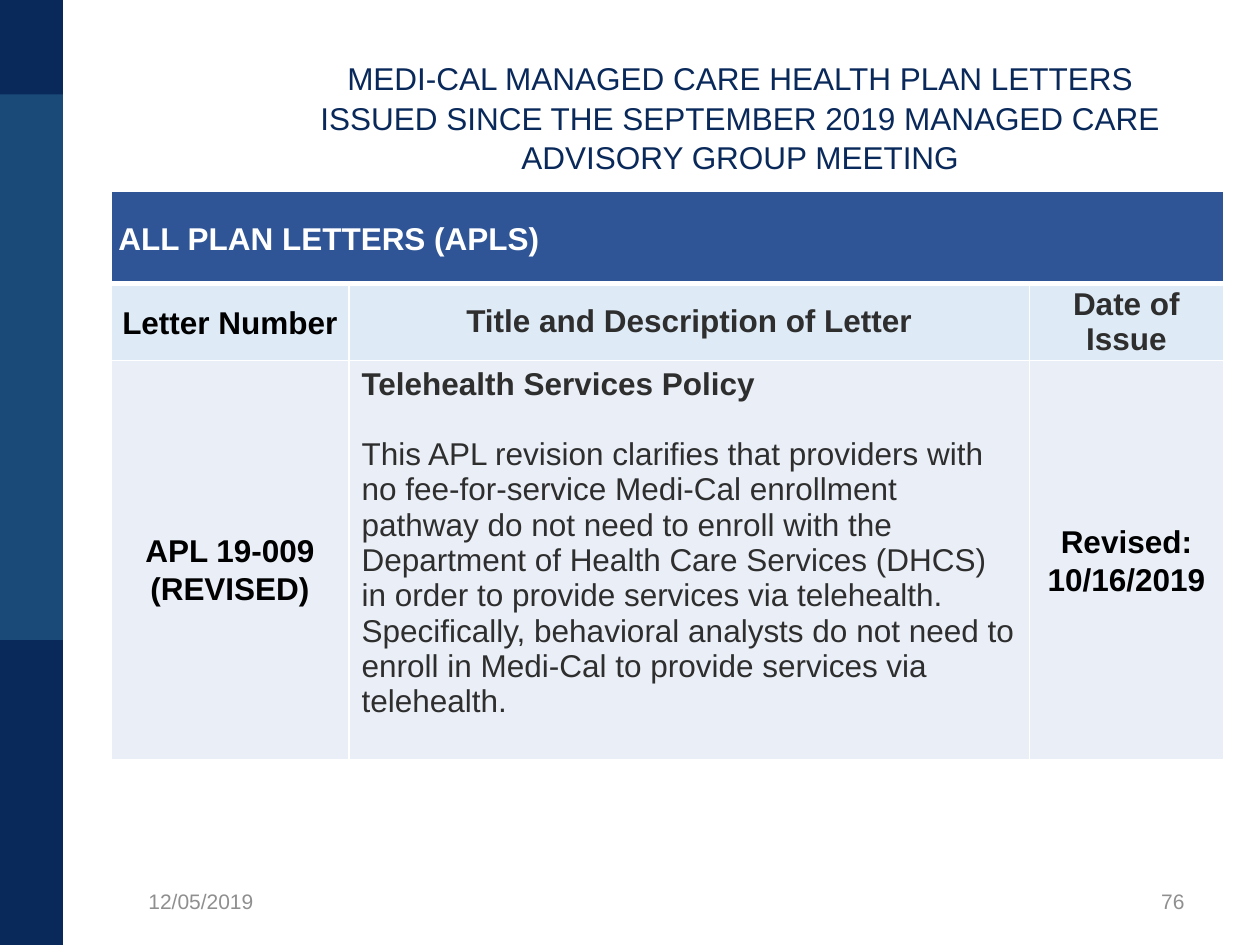
from lxml import etree
from pptx import Presentation
from pptx.util import Inches, Pt
from pptx.dml.color import RGBColor as RGB
from pptx.enum.shapes import MSO_SHAPE as SHAPE
from pptx.enum.text import MSO_ANCHOR as ANCHOR, PP_ALIGN as ALIGN
from pptx.oxml import parse_xml
from pptx.oxml.ns import nsdecls

COLORS = {
    "white": "FFFFFF", "navy": "0A295B", "blue": "1A4A78", "head": "2F5597",
    "pale": "DEEBF7", "body": "EAEFF7", "dark": "2E2E2E", "black": "000000",
    "gray": "8F8F8F",
}


def color(name):
    return RGB.from_string(COLORS[name])


def write(frame, text, size=18, ink="dark", bold=False, align=ALIGN.LEFT,
          lead=1, gap=0, fresh=True):
    para = frame.paragraphs[0] if fresh else frame.add_paragraph()
    para.text = text
    para.alignment = align
    para.line_spacing = lead
    para.space_before = Pt(gap)
    para.font.name = "Arial"
    para.font.size = Pt(size)
    para.font.bold = bold
    para.font.color.rgb = color(ink)


def border(cell, widths):
    props = cell._tc.get_or_add_tcPr()
    for spot, (side, width) in enumerate(zip("LRTB", widths)):
        props.insert(spot, parse_xml(
            f'<a:ln{side} {nsdecls("a")} w="{Pt(width)}"><a:solidFill>'
            f'<a:srgbClr val="{COLORS["white"]}"/></a:solidFill></a:ln{side}>'))


deck = Presentation()
deck.slide_width, deck.slide_height = Inches(10), Inches(7.5)
slide = deck.slides.add_slide(deck.slide_layouts[5])

for top, height, fill in [(0, 7.5, "blue"), (0, 0.75, "navy"), (5.08, 2.42, "navy")]:
    bar = slide.shapes.add_shape(
        SHAPE.RECTANGLE, 0, Inches(top), Inches(0.5), Inches(height))
    bar.shadow.inherit = False
    bar.fill.solid()
    bar.fill.fore_color.rgb = color(fill)
    bar.line.fill.background()

title = slide.shapes.title
title.left, title.top = Inches(2), Inches(0.3)
title.width, title.height = Inches(7.75), Inches(1.25)
title.text_frame.vertical_anchor = ANCHOR.MIDDLE
write(title.text_frame,
      "MEDI-CAL MANAGED CARE HEALTH PLAN LETTERS\v"
      "ISSUED SINCE THE SEPTEMBER 2019 MANAGED CARE ADVISORY GROUP MEETING",
      ink="navy", align=ALIGN.CENTER, lead=1.05)

widths, heights = [1.89, 5.4, 1.54], [0.73, 0.61, 3.17]
table = slide.shapes.add_table(
    3, 3, Inches(0.88), Inches(1.52), Inches(sum(widths)), Inches(sum(heights))).table
for col, width in zip(table.columns, widths):
    col.width = Inches(width)
for row, height in zip(table.rows, heights):
    row.height = Inches(height)

for r, fill in enumerate(["head", "pale", "body"]):
    for cell in table.rows[r].cells:
        cell.fill.solid()
        cell.fill.fore_color.rgb = color(fill)
        cell.vertical_anchor = ANCHOR.MIDDLE
        if r < 2:
            cell.margin_left = cell.margin_right = Inches(0.06)
            cell.margin_top = cell.margin_bottom = 0
        border(cell, (1, 1, 3 if r == 1 else 1, 3 if r == 0 else 1))

banner = table.cell(0, 0)
banner.merge(table.cell(0, 2))
banner.margin_top = Inches(0.04)
write(banner.text_frame, "ALL PLAN LETTERS (APLS)", ink="white", bold=True)

for r, c, text, ink, lead in [
    (1, 0, "Letter Number", "black", 1.08),
    (1, 1, "Title and Description of Letter", "dark", 1),
    (1, 2, "Date of Issue", "dark", 1),
    (2, 0, "APL 19-009 (REVISED)", "black", 1.08),
    (2, 2, "Revised: 10/16/2019", "black", 1.08),
]:
    write(table.cell(r, c).text_frame, text, ink=ink, bold=True,
          align=ALIGN.CENTER, lead=lead)
table.cell(2, 0).margin_top = Inches(0.19)

policy = table.cell(2, 1)
policy.margin_bottom = Inches(0.32)
write(policy.text_frame, "Telehealth Services Policy", bold=True)
write(policy.text_frame,
      "This APL revision clarifies that providers with no fee-for-service Medi-Cal "
      "enrollment pathway do not need to enroll with the Department of Health Care "
      "Services (DHCS) in order to provide services via telehealth. Specifically, "
      "behavioral analysts do not need to enroll in Medi-Cal to provide services "
      "via telehealth.", gap=20, fresh=False)

for left, text, align in [(1.08, "12/05/2019", ALIGN.LEFT), (7.17, "76", ALIGN.RIGHT)]:
    box = slide.shapes.add_textbox(Inches(left), Inches(6.95), Inches(2.33), Inches(0.4))
    box.text_frame.word_wrap = True
    box.text_frame.vertical_anchor = ANCHOR.MIDDLE
    write(box.text_frame, text, size=12, ink="gray", align=align)

deck.save("out.pptx")
